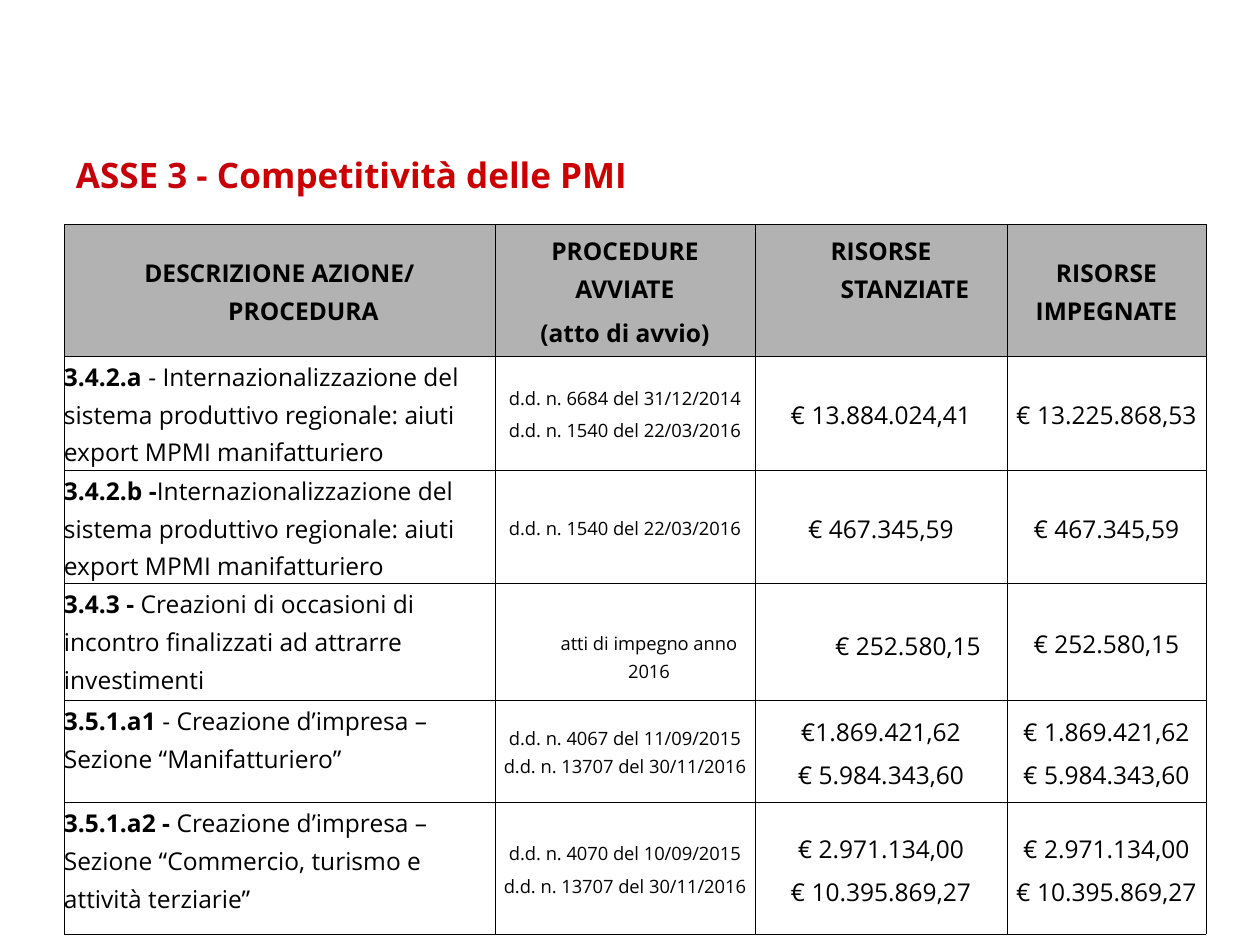
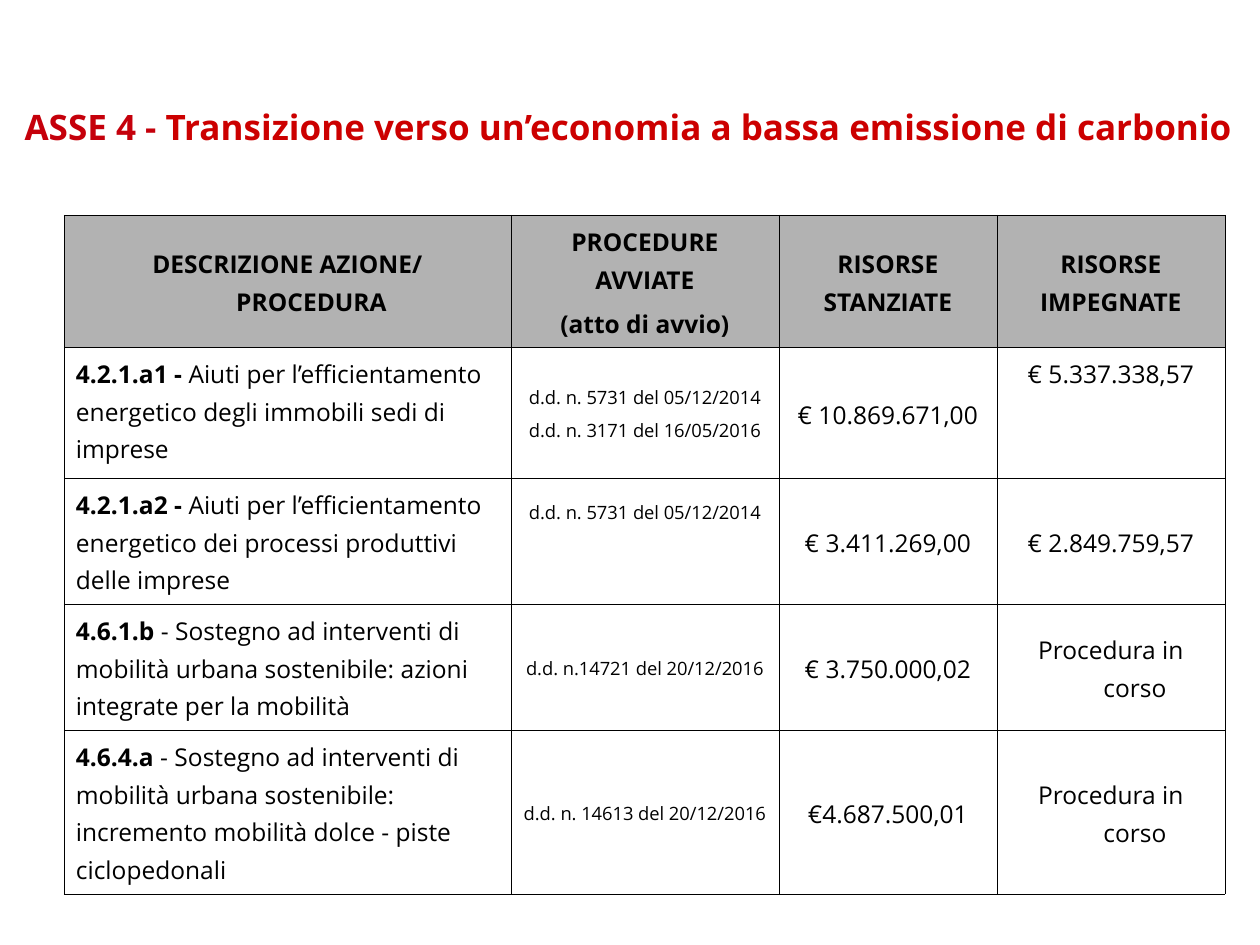
from dataclasses import dataclass

import pptx
import pptx.dml.color
import pptx.enum.text
import pptx.oxml
import pptx.oxml.ns
import pptx.util

ALIGN = pptx.enum.text.PP_ALIGN
ANCHOR = pptx.enum.text.MSO_ANCHOR
EMU_PER_PX = 914400 / 126


@dataclass(frozen=True)
class Theme:
    font: str = "Open Sans"
    axis_red: str = "C5000B"
    title_red: str = "CC0000"
    ink: str = "000000"
    header_fill: str = "B2B2B2"
    title_size: float = 20
    body_size: float = 14
    act_size: float = 10.5
    line_spacing: float = 1.13
    border_width: float = 0.06
    hang: int = 48
    inset_x: int = 12
    inset_y: int = 6


THEME = Theme()


@dataclass(frozen=True)
class Entry:
    """A cell text that departs from the layout of its column."""
    text: str
    indent: int = 0
    hang: bool = False
    anchor: ANCHOR = ANCHOR.MIDDLE
    extra_top: int = 0


def px(length):
    return pptx.util.Emu(round(length * EMU_PER_PX))


def hanging(text, anchor=ANCHOR.MIDDLE):
    return Entry(text, indent=THEME.hang, hang=True, anchor=anchor)


def style_span(span, size, color=THEME.ink, bold=False):
    span.font.name = THEME.font
    span.font.size = pptx.util.Pt(size)
    span.font.bold = bold
    span.font.color.rgb = pptx.dml.color.RGBColor.from_string(color)


def add_span(para, text, size, color=THEME.ink, bold=False):
    span = para.add_run()
    span.text = text
    style_span(span, size, color, bold)


# Title: axis label in dark red, subject in bright red
def draw_title(page, box, label, subject, align):
    shape = page.shapes.add_textbox(*map(px, box))
    frame = shape.text_frame
    frame.word_wrap = align == ALIGN.LEFT
    frame.margin_left = frame.margin_right = px(THEME.inset_x)
    frame.margin_top = frame.margin_bottom = px(THEME.inset_y)
    para = frame.paragraphs[0]
    para.alignment = align
    para.line_spacing = THEME.line_spacing
    add_span(para, label, THEME.title_size, THEME.axis_red, True)
    add_span(para, subject, THEME.title_size, THEME.title_red, True)


# Cells
def frame_cell(cell, fill, anchor, inset_x, inset_y, extra_top=0):
    properties = cell._tc.get_or_add_tcPr()
    for side in "LRTB":
        properties.append(pptx.oxml.parse_xml(
            f'<a:ln{side} {pptx.oxml.ns.nsdecls("a")} w="{pptx.util.Pt(THEME.border_width)}">'
            f'<a:solidFill><a:srgbClr val="{THEME.ink}"/></a:solidFill></a:ln{side}>'))
    if fill:
        cell.fill.solid()
        cell.fill.fore_color.rgb = pptx.dml.color.RGBColor.from_string(fill)
    else:
        cell.fill.background()
    cell.vertical_anchor = anchor
    cell.margin_left = cell.margin_right = px(inset_x)
    cell.margin_top, cell.margin_bottom = px(inset_y + extra_top), px(inset_y)


def write_centred(cell, entry, size, space_before, bold=False):
    cell.text_frame.text = entry.text
    for index, para in enumerate(cell.text_frame.paragraphs):
        para.alignment = ALIGN.CENTER
        para.line_spacing = THEME.line_spacing
        if index:
            para.space_before = pptx.util.Pt(space_before)
        if entry.indent:
            properties = para._p.get_or_add_pPr()
            properties.set("marL", str(px(entry.indent)))
            properties.set("indent", str(-px(entry.indent) if entry.hang else 0))
        for span in para.runs:
            style_span(span, size, bold=bold)


def write_description(cell, code, description):
    para = cell.text_frame.paragraphs[0]
    para.line_spacing = THEME.line_spacing
    add_span(para, code, THEME.body_size, bold=True)
    add_span(para, description, THEME.body_size)


# Table of actions: grey header, then description, acts and two amounts
def draw_actions(page, left, top, widths, heights, header, actions, inset_x, inset_y):
    table = page.shapes.add_table(
        len(heights), len(widths), px(left), px(top), px(sum(widths)), px(sum(heights))).table
    table.first_row = table.horz_banding = False
    for column, width in zip(table.columns, widths):
        column.width = px(width)
    for row, height in zip(table.rows, heights):
        row.height = px(height)

    for column, entry in enumerate(header):
        cell = table.cell(0, column)
        frame_cell(cell, THEME.header_fill, entry.anchor, THEME.inset_x, THEME.inset_y)
        write_centred(cell, entry, THEME.body_size, 3.5, bold=True)

    for row, (code, description, *values) in enumerate(actions, start=1):
        cell = table.cell(row, 0)
        frame_cell(cell, None, ANCHOR.TOP, inset_x, inset_y)
        write_description(cell, code, description)
        for column, value in enumerate(values, start=1):
            entry = value if isinstance(value, Entry) else Entry(value)
            cell = table.cell(row, column)
            frame_cell(cell, None, entry.anchor, inset_x, inset_y, entry.extra_top)
            size, space = (THEME.act_size, 2.5) if column == 1 else (THEME.body_size, 3)
            write_centred(cell, entry, size, space)


def make_header(granted):
    return [hanging("DESCRIZIONE AZIONE/ PROCEDURA"),
            Entry("PROCEDURE AVVIATE\n(atto di avvio)"),
            granted,
            Entry("RISORSE IMPEGNATE")]


EXPORT_AID = ("Internazionalizzazione del sistema produttivo regionale: "
              "aiuti export MPMI manifatturiero")
URBAN_MOBILITY = " - Sostegno ad interventi di mobilità urbana sostenibile: "
IN_PROGRESS = hanging("Procedura in corso")

SME_ACTIONS = [
    ("3.4.2.a", " - " + EXPORT_AID,
     "d.d. n. 6684 del 31/12/2014\nd.d. n. 1540 del 22/03/2016",
     "€ 13.884.024,41", "€ 13.225.868,53"),
    ("3.4.2.b -", EXPORT_AID,
     "d.d. n. 1540 del 22/03/2016", "€ 467.345,59", "€ 467.345,59"),
    ("3.4.3 - ", "Creazioni di occasioni di incontro finalizzati ad attrarre investimenti",
     Entry("atti di impegno anno 2016", indent=THEME.hang, extra_top=28),
     Entry("€ 252.580,15", indent=54, extra_top=4), "€ 252.580,15"),
    ("3.5.1.a1", " - Creazione d’impresa – Sezione “Manifatturiero”",
     "d.d. n. 4067 del 11/09/2015\vd.d. n. 13707 del 30/11/2016",
     "€1.869.421,62\n€ 5.984.343,60", "€ 1.869.421,62\n€ 5.984.343,60"),
    ("3.5.1.a2 - ", "Creazione d’impresa – Sezione “Commercio, turismo e attività terziarie”",
     "d.d. n. 4070 del 10/09/2015\nd.d. n. 13707 del 30/11/2016",
     "€ 2.971.134,00\n€ 10.395.869,27", "€ 2.971.134,00\n€ 10.395.869,27"),
]

CARBON_ACTIONS = [
    ("4.2.1.a1 - ", "Aiuti per l’efficientamento energetico degli immobili sedi di imprese",
     "d.d. n. 5731 del 05/12/2014\nd.d. n. 3171 del 16/05/2016",
     "€ 10.869.671,00", Entry("€ 5.337.338,57", anchor=ANCHOR.TOP)),
    ("4.2.1.a2 - ", "Aiuti per l’efficientamento energetico dei processi produttivi delle imprese",
     Entry("d.d. n. 5731 del 05/12/2014", anchor=ANCHOR.TOP, extra_top=13),
     "€ 3.411.269,00", "€ 2.849.759,57"),
    ("4.6.1.b", URBAN_MOBILITY + "azioni integrate per la mobilità",
     "d.d. n.14721 del 20/12/2016", "€ 3.750.000,02", IN_PROGRESS),
    ("4.6.4.a", URBAN_MOBILITY + "incremento mobilità dolce - piste ciclopedonali",
     "d.d. n. 14613 del 20/12/2016", "€4.687.500,01", IN_PROGRESS),
]


def main():
    deck = pptx.Presentation()
    deck.slide_width, deck.slide_height = px(1260), px(945)
    blank = deck.slide_layouts[6]

    # Axis 3
    page = deck.slides.add_slide(blank)
    draw_actions(page, 64, 224, [431, 260, 252, 199], [132, 114, 113, 117, 102, 132],
                 make_header(hanging("RISORSE STANZIATE", ANCHOR.TOP)), SME_ACTIONS, 0, 0)
    draw_title(page, (64, 142, 1121, 60), "ASSE 3 - C", "ompetitività delle PMI", ALIGN.LEFT)

    # Axis 4
    page = deck.slides.add_slide(blank)
    draw_actions(page, 64, 215, [447, 268, 218, 228], [132, 131, 126, 126, 164],
                 make_header(Entry("RISORSE STANZIATE")), CARBON_ACTIONS,
                 THEME.inset_x, THEME.inset_y)
    draw_title(page, (10, 94, 1237, 60), "ASSE 4 - ",
               "Transizione verso un’economia a bassa emissione di carbonio", ALIGN.CENTER)

    deck.save("out.pptx")


if __name__ == "__main__":
    main()
